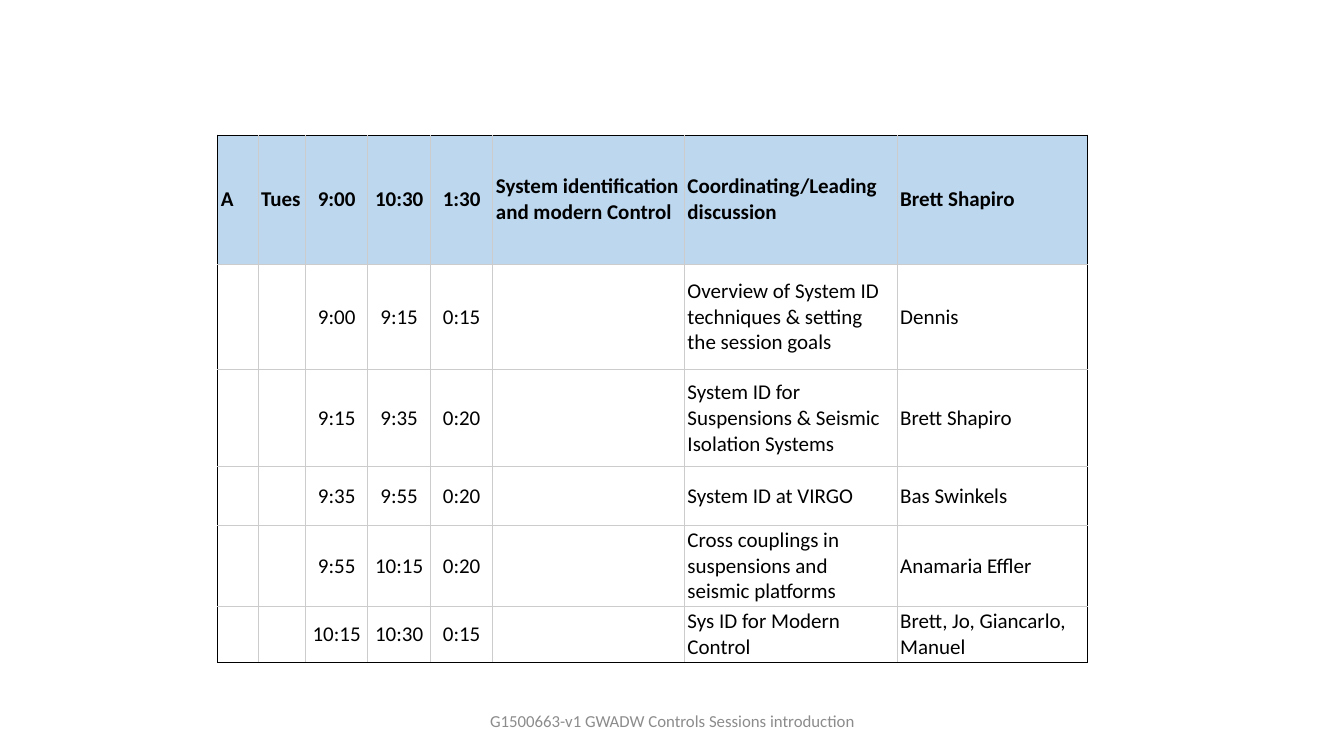
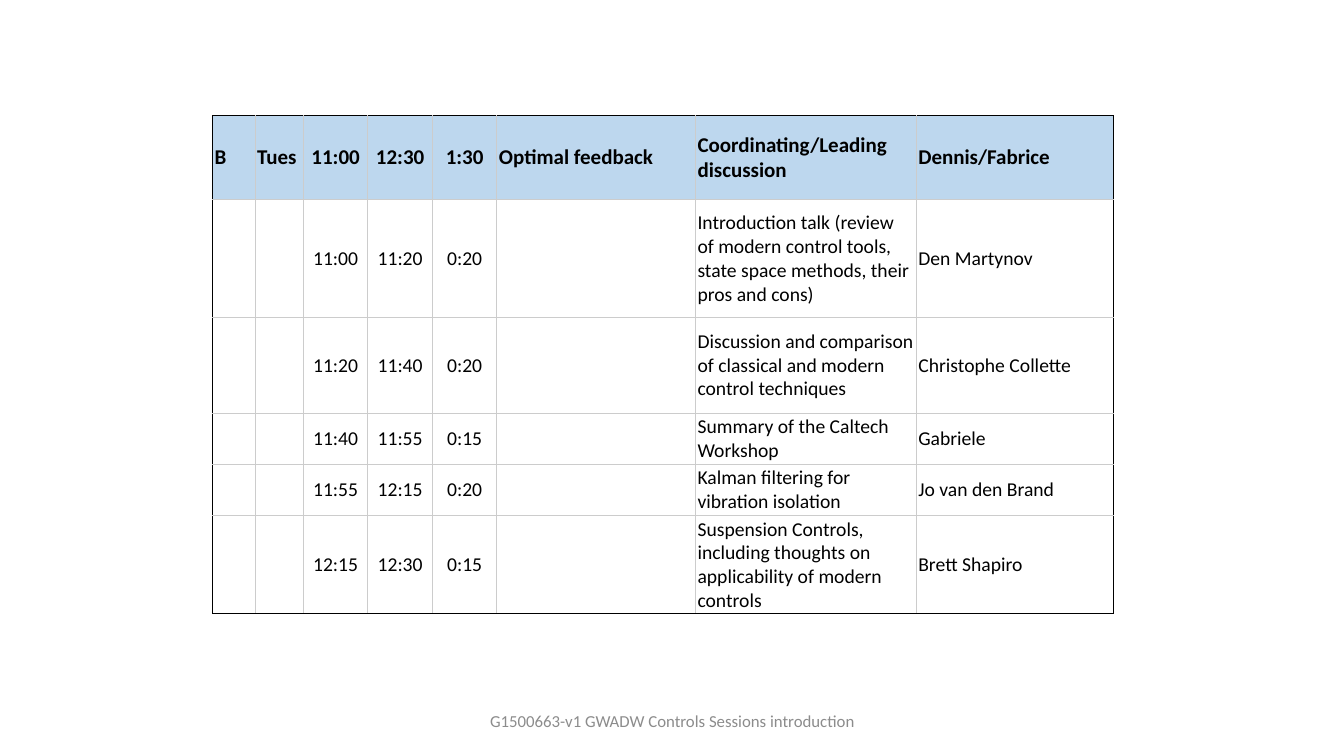
from dataclasses import dataclass

from lxml import etree
from pptx import Presentation
from pptx.dml import color
from pptx.enum import text
from pptx.oxml import ns
from pptx.util import Inches, Pt


@dataclass(frozen=True)
class Theme:
    font: str = "Calibri"
    ink: str = "000000"
    grid: str = "CCCCCC"
    head: str = "BDD7EE"
    mute: str = "8C8C8C"
    line: float = 0.75
    big: int = 15
    small: int = 14
    foot: int = 12


THEME = Theme()
FOOTER = "G1500663-v1 GWADW Controls Sessions introduction"
TIMES = range(2, 5)

SESSIONS = [
    {
        "at": (2.16, 1.34),
        "cols": [0.4, 0.47, 0.62, 0.62, 0.62, 1.9, 2.11, 1.89],
        "rows": [1.28, 1.05, 0.96, 0.58, 0.81, 0.55],
        "pad": 0.03,
        "size": THEME.big,
        "head": ["A", "Tues", "9:00", "10:30", "1:30",
                 "System identification and modern Control",
                 "Coordinating/Leading discussion", "Brett Shapiro"],
        "talks": [
            ("9:00", "9:15", "0:15",
             "Overview of System ID techniques & setting the session goals", "Dennis"),
            ("9:15", "9:35", "0:20",
             "System ID for Suspensions & Seismic Isolation Systems", "Brett Shapiro"),
            ("9:35", "9:55", "0:20", "System ID at VIRGO", "Bas Swinkels"),
            ("9:55", "10:15", "0:20",
             "Cross couplings in suspensions and seismic platforms", "Anamaria Effler"),
            ("10:15", "10:30", "0:15",
             "Sys ID for Modern Control", "Brett, Jo, Giancarlo, Manuel"),
        ],
    },
    {
        "at": (2.11, 1.15),
        "cols": [0.42, 0.48, 0.64, 0.64, 0.64, 1.97, 2.19, 1.96],
        "rows": [0.83, 1.17, 0.95, 0.5, 0.5, 0.95],
        "pad": 0.02,
        "size": THEME.small,
        "head": ["B", "Tues", "11:00", "12:30", "1:30", "Optimal feedback",
                 "Coordinating/Leading discussion", "Dennis/Fabrice"],
        "talks": [
            ("11:00", "11:20", "0:20",
             "Introduction talk (review of modern control tools, state space methods, "
             "their pros and cons)", "Den Martynov"),
            ("11:20", "11:40", "0:20",
             "Discussion and comparison of classical and modern control techniques",
             "Christophe Collette"),
            ("11:40", "11:55", "0:15", "Summary of the Caltech Workshop", "Gabriele"),
            ("11:55", "12:15", "0:20",
             "Kalman filtering for vibration isolation", "Jo van den Brand"),
            ("12:15", "12:30", "0:15",
             "Suspension Controls, including thoughts on applicability of modern controls",
             "Brett Shapiro"),
        ],
    },
]


def style(para, size, tint, bold=False, center=False):
    font = para.font
    font.name, font.size, font.bold = THEME.font, Pt(size), bold
    font.color.rgb = color.RGBColor.from_string(tint)
    para.alignment = text.PP_ALIGN.CENTER if center else text.PP_ALIGN.LEFT


def border(cell, outer):
    props = cell._tc.get_or_add_tcPr()
    for spot, side in enumerate("LRTB"):
        line = etree.Element(ns.qn(f"a:ln{side}"), w=str(Pt(THEME.line)))
        fill = etree.SubElement(line, ns.qn("a:solidFill"))
        tint = THEME.ink if side in outer else THEME.grid
        etree.SubElement(fill, ns.qn("a:srgbClr"), val=tint)
        props.insert(spot, line)


def fill_cell(cell, words, size, pad, head, center):
    cell.text = words
    cell.vertical_anchor = text.MSO_ANCHOR.MIDDLE
    cell.margin_left = cell.margin_right = Inches(pad)
    cell.margin_top = cell.margin_bottom = Inches(0.02)
    style(cell.text_frame.paragraphs[0], size, THEME.ink, head, center)
    if head:
        cell.fill.solid()
        cell.fill.fore_color.rgb = color.RGBColor.from_string(THEME.head)
    else:
        cell.fill.background()


def add_plan(slide, plan):
    cols, rows = plan["cols"], plan["rows"]
    left, top = plan["at"]
    grid = slide.shapes.add_table(
        len(rows), len(cols), Inches(left), Inches(top),
        Inches(sum(cols)), Inches(sum(rows))).table
    grid.first_row = grid.horz_banding = False
    for col, width in zip(grid.columns, cols):
        col.width = Inches(width)
    for row, height in zip(grid.rows, rows):
        row.height = Inches(height)
    lines = [plan["head"]]
    for start, end, span, topic, who in plan["talks"]:
        lines.append(["", "", start, end, span, "", topic, who])
    for r, line in enumerate(lines):
        for c, words in enumerate(line):
            cell = grid.cell(r, c)
            head = r == 0
            size = THEME.big if head else plan["size"]
            fill_cell(cell, words, size, plan["pad"], head, c in TIMES)
            edges = {"L": c == 0, "R": c == len(cols) - 1,
                     "T": head, "B": r == len(rows) - 1}
            border(cell, [side for side, on in edges.items() if on])


def add_foot(slide):
    box = slide.shapes.add_textbox(Inches(4.42), Inches(6.95), Inches(4.5), Inches(0.4))
    frame = box.text_frame
    frame.word_wrap = True
    frame.vertical_anchor = text.MSO_ANCHOR.MIDDLE
    frame.text = FOOTER
    style(frame.paragraphs[0], THEME.foot, THEME.mute, center=True)


def main():
    deck = Presentation()
    deck.slide_width, deck.slide_height = Inches(13.33), Inches(7.5)
    for plan in SESSIONS:
        slide = deck.slides.add_slide(deck.slide_layouts[6])
        add_plan(slide, plan)
        add_foot(slide)
    deck.save("out.pptx")


if __name__ == "__main__":
    main()
